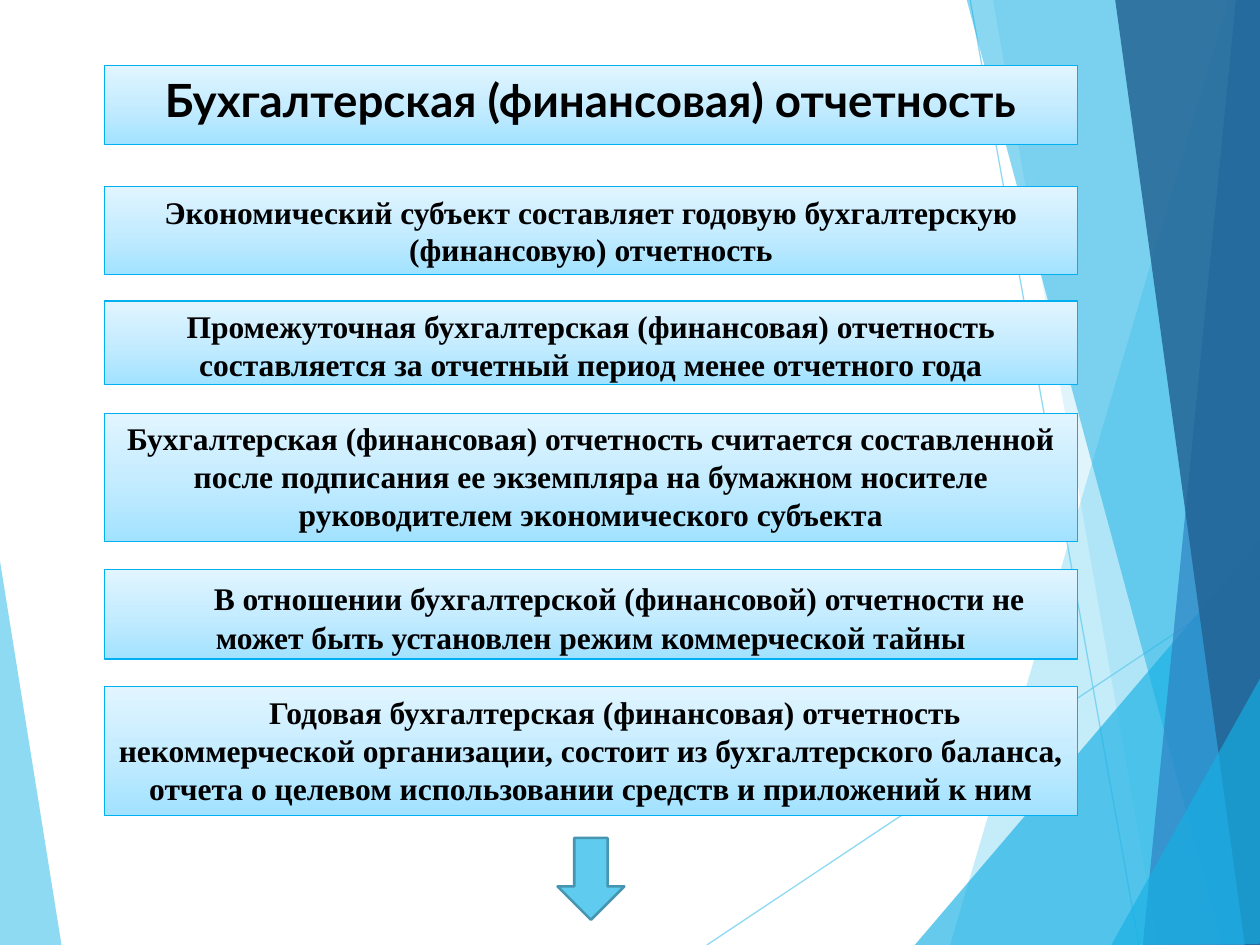
from lxml.etree import SubElement
from pptx import Presentation
from pptx.dml.color import RGBColor
from pptx.enum.shapes import MSO_CONNECTOR, MSO_SHAPE
from pptx.enum.text import MSO_ANCHOR, PP_ALIGN
from pptx.oxml.ns import qn
from pptx.util import Inches, Pt

COLORS = {
    "sky": "5FCBEF", "cyan": "17B0E4", "blue": "2E83C3", "navy": "226292",
    "border": "00B0F0", "arrow_border": "4696B1", "text": "000000",
    "box_bottom": "A2E2FF", "box_middle": "C5ECFF", "box_top": "E2F5FF",
}
BOX_GRADIENT = [(0, "box_bottom"), (50, "box_middle"), (100, "box_top")]
BOX_LEFT, BOX_WIDTH, FIRST_INDENT = 0.83, 7.72, 0.38

LEFT_FACET = [("sky", 70, [(-0.01, 4.39), (0.49, 7.51), (-0.01, 7.5)])]
RAYS = [((5.61, 7.5), (10.01, 4.57)), ((7.7, 0), (9.04, 7.5))]
RIGHT_FACETS = [
    ("sky", 36, [(9.75, 0), (7.54, 7.5), (10.02, 7.51), (10.01, 0.01)]),
    ("sky", 20, [(7.88, -0.01), (9.19, 7.5), (10.01, 7.5), (10.01, -0.01)]),
    ("cyan", 66, [(7.26, 7.5), (10, 4.29), (10.01, 7.5)]),
    ("cyan", 50, [(7.67, -0.01), (9.7, 7.5), (10.01, 7.49), (10.01, -0.01)]),
    ("blue", 70, [(9.81, -0.01), (9.07, 7.5), (10.01, 7.5), (10, -0.01)]),
    ("navy", 82, [(8.85, -0.01), (9.88, 7.5), (10.02, 7.5), (10, -0.01)]),
    ("cyan", 66, [(8.82, 7.5), (10.02, 5.35), (10.02, 7.49)]),
]

BODY = ("Times New Roman", 18)
BOXES = [
    (0.52, 0.63, False, [("Бухгалтерская (финансовая) отчетность", "Lato", 26.1)]),
    (1.48, 0.7, False, [("Экономический субъект составляет годовую бухгалтерскую "
                         "(финансовую) отчетность", *BODY)]),
    (2.39, 0.66, False, [("Промежуточная бухгалтерская (финансовая) отчетность "
                          "составляется за отчетный период менее отчетного года", *BODY)]),
    (3.28, 1.02, False, [("Бухгалтерская (финансовая) отчетность считается составленной "
                          "после подписания ее экземпляра на бумажном носителе "
                          "руководителем экономического субъекта", *BODY)]),
    (4.52, 0.71, True, [(" ", "Times New Roman", 20),
                        ("В отношении бухгалтерской (финансовой) отчетности не "
                         "может быть установлен режим коммерческой тайны", *BODY)]),
    (5.45, 1.02, True, [("Годовая бухгалтерская (финансовая) отчетность "
                         "некоммерческой организации, состоит из бухгалтерского баланса, "
                         "отчета о целевом использовании средств и приложений к ним", *BODY)]),
]


def color(name):
    return RGBColor.from_string(COLORS[name])


def set_alpha(fill_parent, percent):
    element = fill_parent.find(".//" + qn("a:srgbClr"))
    SubElement(element, qn("a:alpha"), val=str(percent * 1000))


def add_facet(slide, name, opacity, points):
    corners = [(Inches(x), Inches(y)) for x, y in points]
    builder = slide.shapes.build_freeform(*corners[0], scale=1.0)
    builder.add_line_segments(corners[1:], close=True)
    shape = builder.convert_to_shape()
    shape.shadow.inherit = False
    shape.fill.solid()
    shape.fill.fore_color.rgb = color(name)
    set_alpha(shape.fill._xPr.find(qn("a:solidFill")), opacity)
    shape.line.fill.background()


def add_ray(slide, start, end):
    ends = [Inches(value) for value in (*start, *end)]
    connector = slide.shapes.add_connector(MSO_CONNECTOR.STRAIGHT, *ends)
    connector.line.color.rgb = color("sky")
    connector.line.width = Pt(0.75)
    properties = connector._element.spPr
    set_alpha(properties.find(qn("a:ln")), 70)
    SubElement(properties, qn("a:effectLst"))


def fill_box(shape):
    shape.fill.gradient()
    shape.fill.gradient_angle = 90
    stops = shape.fill._xPr.find(qn("a:gradFill")).find(qn("a:gsLst"))
    for stop in list(stops):
        stops.remove(stop)
    for position, name in BOX_GRADIENT:
        stop = SubElement(stops, qn("a:gs"), pos=str(position * 1000))
        SubElement(stop, qn("a:srgbClr"), val=COLORS[name])


def add_box(slide, top, height, indented, runs):
    bounds = [Inches(value) for value in (BOX_LEFT, top, BOX_WIDTH, height)]
    shape = slide.shapes.add_shape(MSO_SHAPE.RECTANGLE, *bounds)
    shape.shadow.inherit = False
    fill_box(shape)
    shape.line.color.rgb = color("border")
    shape.line.width = Pt(0.75)
    frame = shape.text_frame
    frame.word_wrap = True
    frame.vertical_anchor = MSO_ANCHOR.TOP
    paragraph = frame.paragraphs[0]
    paragraph.alignment = PP_ALIGN.CENTER
    if indented:
        paragraph._p.get_or_add_pPr().set("indent", str(Inches(FIRST_INDENT)))
    for text, font_name, size in runs:
        run = paragraph.add_run()
        run.text = text
        run.font.name = font_name
        run.font.size = Pt(size)
        run.font.bold = True
        run.font.color.rgb = color("text")


def add_down_arrow(slide):
    width = 0.53
    left = BOX_LEFT + (BOX_WIDTH - width) / 2
    bounds = [Inches(value) for value in (left, 6.65, width, 0.65)]
    arrow = slide.shapes.add_shape(MSO_SHAPE.DOWN_ARROW, *bounds)
    arrow.shadow.inherit = False
    arrow.fill.solid()
    arrow.fill.fore_color.rgb = color("sky")
    arrow.line.color.rgb = color("arrow_border")
    arrow.line.width = Pt(1.5)


def main():
    presentation = Presentation()
    presentation.slide_width = Inches(10)
    presentation.slide_height = Inches(7.5)
    slide = presentation.slides.add_slide(presentation.slide_layouts[6])
    for facet in LEFT_FACET:
        add_facet(slide, *facet)
    for ray in RAYS:
        add_ray(slide, *ray)
    for facet in RIGHT_FACETS:
        add_facet(slide, *facet)
    for box in BOXES:
        add_box(slide, *box)
    add_down_arrow(slide)
    presentation.save("out.pptx")


if __name__ == "__main__":
    main()
